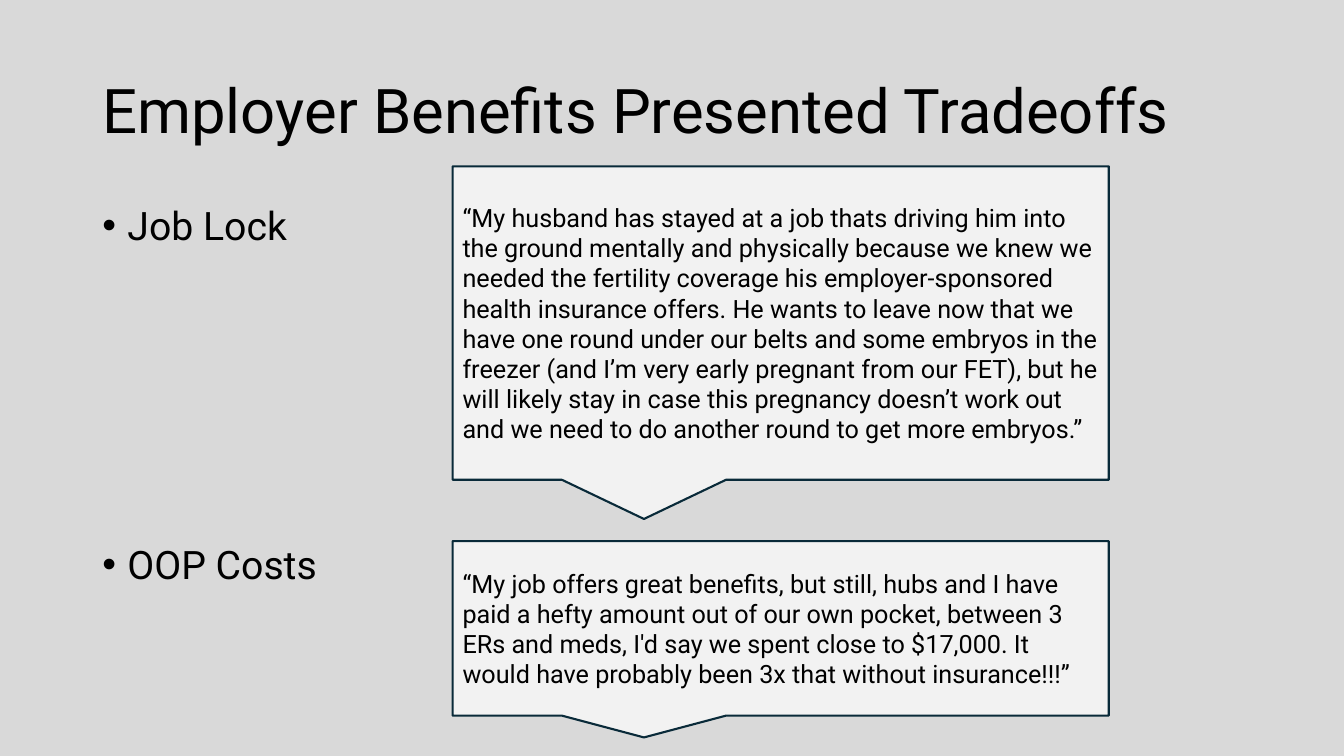
from pptx import Presentation
from pptx.dml.color import RGBColor
from pptx.enum.shapes import MSO_SHAPE as Shape
from pptx.enum.text import MSO_ANCHOR as Anchor, PP_ALIGN as Align
from pptx.oxml import parse_xml
from pptx.oxml.ns import nsdecls
from pptx.util import Pt

# Content
TITLE = "Employer Benefits Presented Tradeoffs"
# (topic, quote, callout top, callout height)
TRADEOFFS = [
    ("Job Lock",
     "“My husband has stayed at a job thats driving him into the ground mentally "
     "and physically because we knew we needed the fertility coverage his "
     "employer-sponsored health insurance offers. He wants to leave now that we "
     "have one round under our belts and some embryos in the freezer (and I’m very "
     "early pregnant from our FET), but he will likely stay in case this pregnancy "
     "doesn’t work out and we need to do another round to get more embryos.”",
     118.8, 223.9),
    ("OOP Costs",
     "“My job offers great benefits, but still, hubs and I have paid a hefty amount "
     "out of our own pocket, between 3 ERs and meds, I'd say we spent close to "
     "$17,000. It would have probably been 3x that without insurance!!!”",
     386.6, 124.6),
]

# Layout and format, lengths in points
LEFT, WIDTH = 66, 828
QUOTE_LEFT, QUOTE_WIDTH = 323.3, 468.7
TOPIC_GAP = 212
INDENT = 18


def color(value):
    return RGBColor.from_string(value)


def format_text(paragraph, size, spacing=1.0):
    paragraph.alignment = Align.LEFT
    paragraph.line_spacing = spacing
    paragraph.space_before = Pt(0)
    for key, value in {"name": "Roboto", "size": Pt(size), "bold": False}.items():
        setattr(paragraph.font, key, value)
    paragraph.font.color.rgb = color("000000")


def add_bullet(paragraph):
    props = paragraph._p.get_or_add_pPr()
    props.set("marL", str(Pt(INDENT)))
    props.set("indent", str(-Pt(INDENT)))
    props.append(parse_xml(f'<a:buFont {nsdecls("a")} typeface="Arial"/>'))
    props.append(parse_xml(f'<a:buChar {nsdecls("a")} char="•"/>'))


deck = Presentation()
deck.slide_width, deck.slide_height = Pt(960), Pt(540)
slide = deck.slides.add_slide(deck.slide_layouts[5])
slide.background.fill.solid()
slide.background.fill.fore_color.rgb = color("D9D9D9")

# Title
title = slide.shapes.title
for side, length in {"left": LEFT, "top": 28.75, "width": WIDTH, "height": 104.4}.items():
    setattr(title, side, Pt(length))
title.text_frame.text = TITLE
title.text_frame.vertical_anchor = Anchor.MIDDLE
format_text(title.text_frame.paragraphs[0], 44, 0.9)

# Topics
topics = slide.shapes.add_textbox(Pt(LEFT), Pt(143.75), Pt(WIDTH), Pt(342.6)).text_frame
topics.word_wrap = True
for row, (topic, *_) in enumerate(TRADEOFFS):
    line = topics.add_paragraph() if row else topics.paragraphs[0]
    line.text = topic
    add_bullet(line)
    format_text(line, 28, 0.9)
    line.space_before = Pt(TOPIC_GAP * row)

# Quotes
for _, quote, top, height in TRADEOFFS:
    callout = slide.shapes.add_shape(Shape.RECTANGULAR_CALLOUT, Pt(QUOTE_LEFT), Pt(top),
                                     Pt(QUOTE_WIDTH), Pt(height))
    callout.shadow.inherit = False
    callout.fill.solid()
    callout.fill.fore_color.rgb = color("F2F2F2")
    callout.line.color.rgb = color("092A39")
    callout.line.width = Pt(1.5)
    frame = callout.text_frame
    frame.word_wrap = True
    frame.vertical_anchor = Anchor.MIDDLE
    frame.text = quote
    format_text(frame.paragraphs[0], 18)

deck.save("out.pptx")
